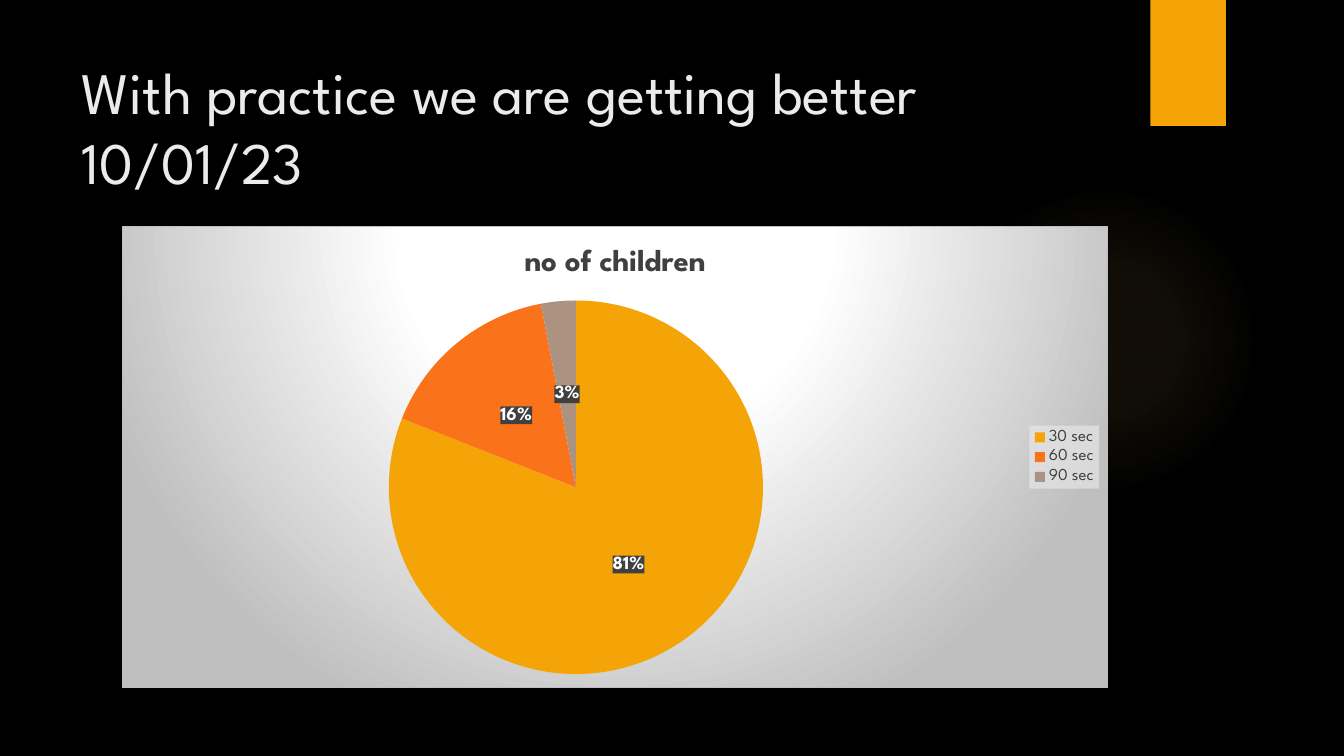
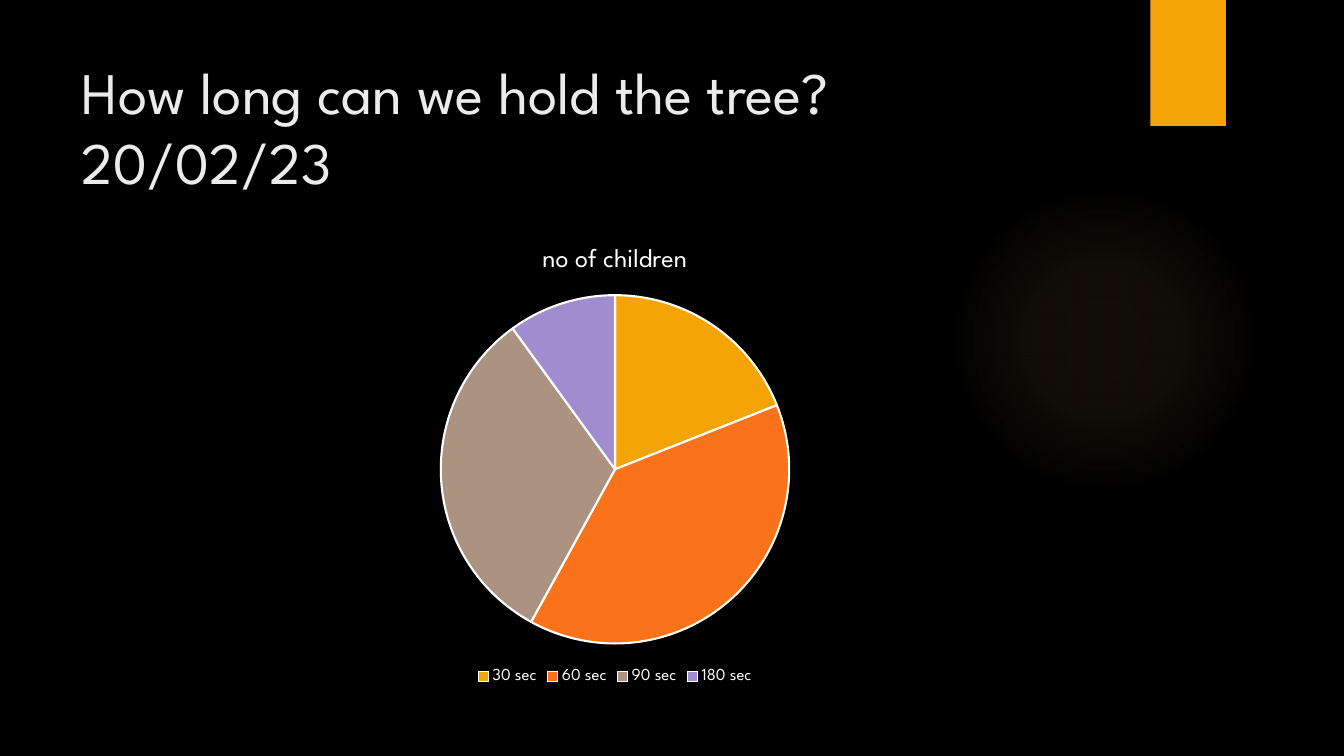
from pptx import Presentation
from pptx import util as u
from pptx.chart.data import CategoryChartData
from pptx.dml.color import RGBColor
from pptx.enum import chart as ch, shapes, text
from pptx.oxml import ns, parse_xml

BLACK = RGBColor(0x00, 0x00, 0x00)
WHITE = RGBColor(0xFF, 0xFF, 0xFF)
TITLE_GREY = RGBColor(0xEB, 0xEB, 0xEB)
DARK_GREY = RGBColor(0x40, 0x40, 0x40)
SILVER = RGBColor(0xBF, 0xBF, 0xBF)
GLOW = RGBColor(0xFA, 0xC9, 0x6A)
AMBER = RGBColor(0xF5, 0xA4, 0x08)
ORANGE = RGBColor(0xFA, 0x73, 0x1A)
TAUPE = RGBColor(0xAB, 0x92, 0x81)
LILAC = RGBColor(0xA1, 0x8C, 0xD0)
SLICES = [AMBER, ORANGE, TAUPE, LILAC]
FONT = "League Spartan"


def radial_fill(stops, top, bottom):
    """Circular gradient; stops are (position, colour, opacity) in percent."""
    marks = "".join(
        f'<a:gs pos="{pos * 1000}"><a:srgbClr val="{colour}">'
        f'<a:alpha val="{opacity * 1000}"/></a:srgbClr></a:gs>'
        for pos, colour, opacity in stops)
    return (f'<a:gradFill {ns.nsdecls("a")} rotWithShape="1"><a:gsLst>{marks}</a:gsLst>'
            f'<a:path path="circle"><a:fillToRect l="50000" t="{top * 1000}" '
            f'r="50000" b="{bottom * 1000}"/></a:path></a:gradFill>')


def chart_part_fill(fill, line=""):
    """Shape properties for a part of a chart."""
    return parse_xml(f'<c:spPr {ns.nsdecls("c", "a")}>{fill}{line}</c:spPr>')


pages = [
    {"title": "With practice we are getting better 10/01/23",
     "counts": {"30 sec": 81, "60 sec": 16, "90 sec": 3},
     "legend": ch.XL_LEGEND_POSITION.RIGHT, "ink": DARK_GREY,
     "heading_size": 22, "panel": True},
    {"title": "How long can we hold the tree?\v20/02/23",
     "counts": {"30 sec": 19, "60 sec": 39, "90 sec": 32, "180 sec": 10},
     "legend": ch.XL_LEGEND_POSITION.BOTTOM, "ink": WHITE,
     "heading_size": 18.6, "panel": False},
]

prs = Presentation()
prs.slide_width, prs.slide_height = u.Inches(13.33), u.Inches(7.5)
backdrop = prs.slide_master.background.fill
backdrop.solid()
backdrop.fore_color.rgb = BLACK

for page in pages:
    slide = prs.slides.add_slide(prs.slide_layouts[5])

    # Soft glow and amber tab
    glow = slide.shapes.add_shape(shapes.MSO_SHAPE.OVAL, u.Inches(9.41), u.Inches(1.83),
                                  u.Inches(3.08), u.Inches(3.08))
    glow.element.spPr.find(ns.qn("a:prstGeom")).addnext(parse_xml(
        radial_fill([(0, GLOW, 7), (36, GLOW, 6), (69, GLOW, 0)], 50, 50)))
    tab = slide.shapes.add_shape(shapes.MSO_SHAPE.RECTANGLE, u.Inches(11.41), u.Inches(0),
                                 u.Inches(0.75), u.Inches(1.25))
    tab.fill.solid()
    tab.fill.fore_color.rgb = AMBER
    for decoration in (glow, tab):
        decoration.line.fill.background()
        decoration.shadow.inherit = False

    # Title
    title = slide.shapes.title
    title.left, title.top = u.Inches(0.71), u.Inches(0.5)
    title.width, title.height = u.Inches(10.29), u.Inches(1.53)
    title.text_frame.text = page["title"]
    title.text_frame.auto_size = text.MSO_AUTO_SIZE.NONE
    title.text_frame.vertical_anchor = text.MSO_ANCHOR.TOP
    heading = title.text_frame.paragraphs[0]
    heading.alignment = text.PP_ALIGN.LEFT
    for run in heading.runs:
        run.font.size = u.Pt(42)
        run.font.name = FONT
        run.font.color.rgb = TITLE_GREY

    # Pie chart
    data = CategoryChartData()
    data.categories = list(page["counts"])
    data.add_series("no of children", list(page["counts"].values()))
    chart = slide.shapes.add_chart(ch.XL_CHART_TYPE.PIE, u.Inches(1.21), u.Inches(2.24),
                                   u.Inches(9.78), u.Inches(4.59), data).chart
    chart.font.size = u.Pt(10)
    chart.font.name = FONT
    chart.font.color.rgb = WHITE

    chart.has_title = True
    chart.chart_title.include_in_layout = False
    chart.chart_title.text_frame.text = "no of children"
    caption = chart.chart_title.text_frame.paragraphs[0].runs[0].font
    caption.size = u.Pt(page["heading_size"])
    caption.bold = page["panel"]

    chart.has_legend = True
    chart.legend.position = page["legend"]
    chart.legend.include_in_layout = False
    chart.legend.font.size = u.Pt(12)
    for font in (caption, chart.legend.font):
        font.name = FONT
        font.color.rgb = page["ink"]

    pie = chart.plots[0]
    pie.vary_by_categories = True
    for index, colour in enumerate(SLICES[:len(page["counts"])]):
        piece = pie.series[0].points[index].format
        piece.fill.solid()
        piece.fill.fore_color.rgb = colour
        if page["panel"]:
            piece.line.fill.background()
        else:
            piece.line.color.rgb = WHITE
            piece.line.width = u.Pt(1.5)

    # Light panel, legend box and percentage labels
    if page["panel"]:
        labels = pie.series[0].data_labels
        labels.show_percentage = True
        labels.show_value = False
        labels.number_format = "0%"
        labels.number_format_is_linked = False
        labels.position = ch.XL_LABEL_POSITION.CENTER
        labels.font.size = u.Pt(13.3)
        labels.font.bold = True
        labels.font.name = FONT
        labels.font.color.rgb = WHITE

        root = chart.element
        panel_fill = radial_fill([(0, WHITE, 100), (39, WHITE, 100), (100, SILVER, 100)], -80, 180)
        border = (f'<a:ln w="{u.Pt(0.75)}"><a:solidFill><a:srgbClr val="{SILVER}"/>'
                  f'</a:solidFill></a:ln>')
        root.find(ns.qn("c:chart")).addnext(chart_part_fill(panel_fill, border))
        for part, colour, opacity in (("c:dLbls", DARK_GREY, 90), ("c:legend", TITLE_GREY, 60)):
            box = next(root.iter(ns.qn(part)))
            box.find(ns.qn("c:txPr")).addprevious(chart_part_fill(
                f'<a:solidFill><a:srgbClr val="{colour}"><a:alpha val="{opacity * 1000}"/>'
                f'</a:srgbClr></a:solidFill>'))

prs.save("out.pptx")
